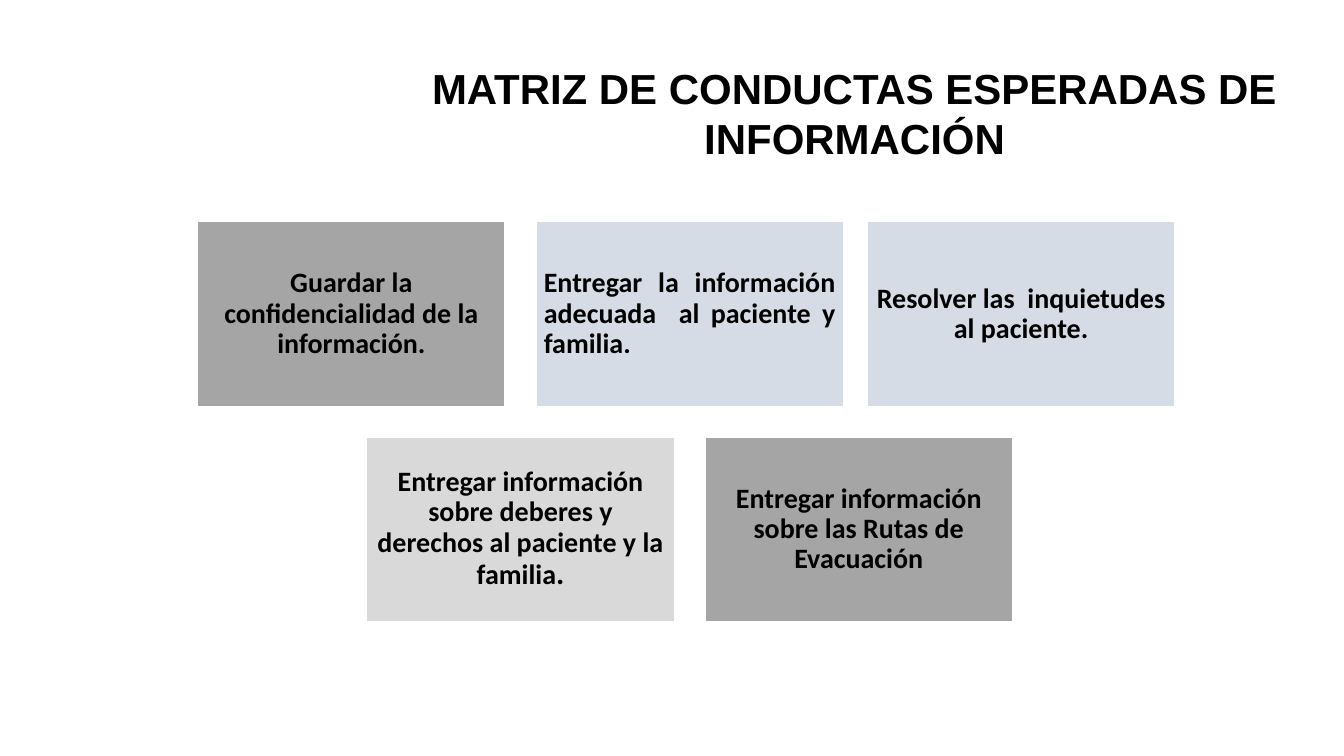
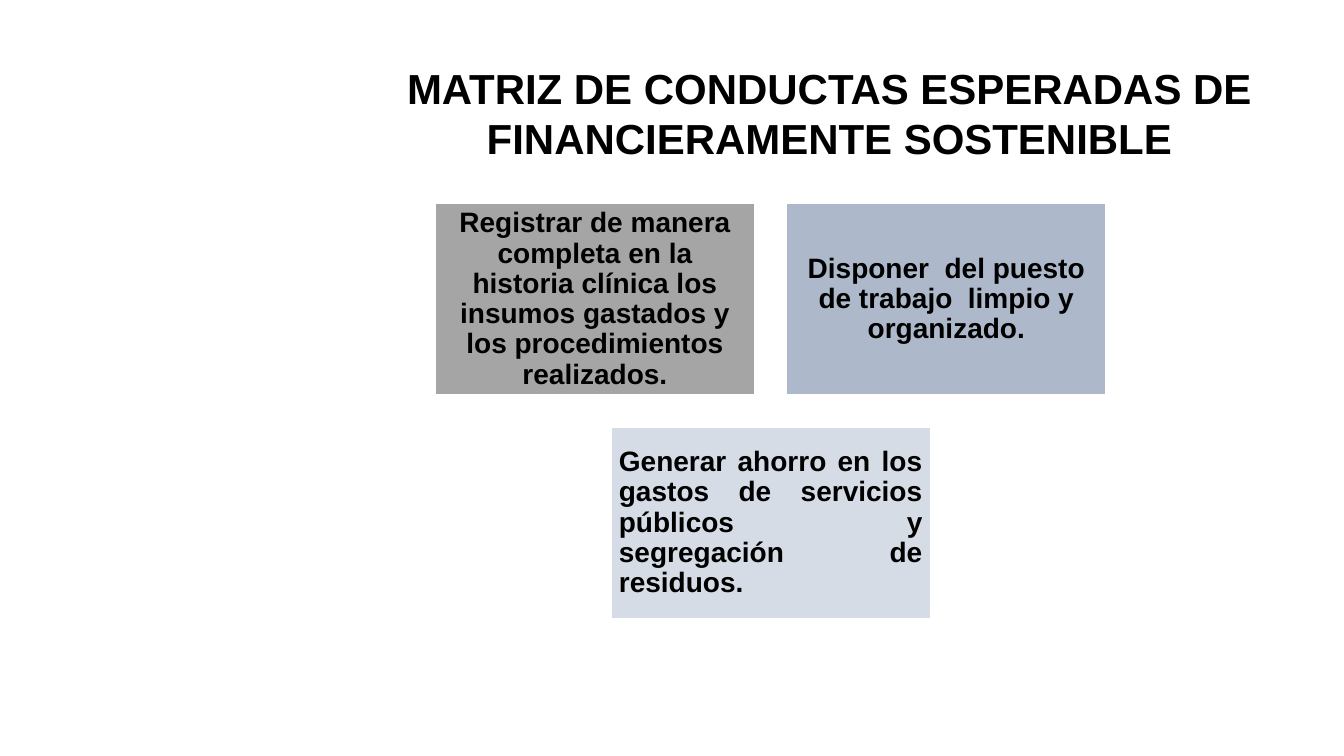
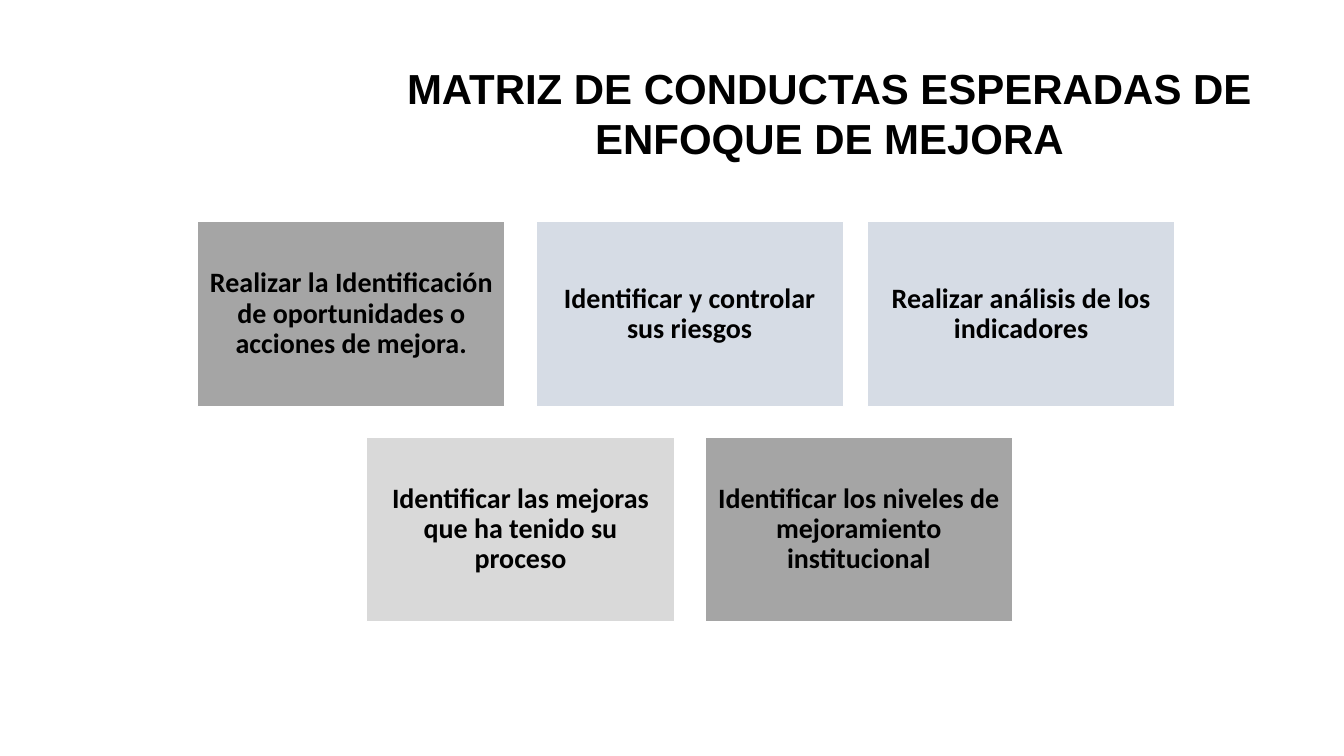
import pptx
import pptx.dml.color
import pptx.enum.shapes
import pptx.enum.text
import pptx.util

Cm = pptx.util.Cm
Pt = pptx.util.Pt
CENTER = pptx.enum.text.PP_ALIGN.CENTER
JUSTIFY = pptx.enum.text.PP_ALIGN.JUSTIFY

BLACK = "000000"
WHITE = "FFFFFF"
GRAY = "A5A5A5"
LIGHT_GRAY = "D9D9D9"
BLUE = "ADB9CA"
LIGHT_BLUE = "D6DCE5"

TITLE_START = "MATRIZ DE CONDUCTAS ESPERADAS DE "
TITLE_TOP, TITLE_WIDTH, TITLE_HEIGHT = 1.45, 22.66, 2.82
BOX_INSET = 0.2
GAP_RATIO = 0.1  # gap between boxes, as a share of the box width

# Each cell is (column, row, fill); half columns centre the lower row.
FIVE_BOXES = {
    "left": 4.98, "top": 5.59, "width": 7.75, "height": 4.65, "font": "Calibri",
    "cells": [(0, 0, GRAY), (1, 0, LIGHT_BLUE), (1.98, 0, LIGHT_BLUE),
              (0.5, 1, LIGHT_GRAY), (1.5, 1, GRAY)],
}
THREE_BOXES = {
    "left": 10.97, "top": 5.13, "width": 8.05, "height": 4.83, "font": "Arial",
    "cells": [(0, 0, GRAY), (1, 0, BLUE), (0.5, 1, LIGHT_BLUE)],
}

# Title ending, title left, layout, and (text, alignment, larger ending) per box
SLIDES = [
    ("INFORMACIÓN", 10.21, FIVE_BOXES, [
        ("Guardar la confidencialidad de la información.", CENTER, ""),
        ("Entregar la información adecuada  al paciente y familia.", JUSTIFY, ""),
        ("Resolver las  inquietudes al paciente.", CENTER, ""),
        ("Entregar información sobre deberes y derechos al paciente y la familia",
         CENTER, "."),
        ("Entregar información sobre las Rutas de Evacuación", CENTER, ""),
    ]),
    ("FINANCIERAMENTE SOSTENIBLE", 9.58, THREE_BOXES, [
        ("Registrar de manera completa en la historia clínica los insumos "
         "gastados y los procedimientos realizados.", CENTER, ""),
        ("Disponer  del puesto de trabajo  limpio y organizado.", CENTER, ""),
        ("Generar ahorro en los gastos de servicios públicos y segregación "
         "de residuos.", JUSTIFY, ""),
    ]),
    ("ENFOQUE DE MEJORA", 9.58, FIVE_BOXES, [
        ("Realizar la Identificación de oportunidades o acciones de mejora.",
         CENTER, ""),
        ("Identificar y controlar sus riesgos", CENTER, ""),
        ("Realizar análisis de los indicadores", CENTER, ""),
        ("Identificar las mejoras que ha tenido su proceso", CENTER, ""),
        ("Identificar los niveles de mejoramiento institucional", CENTER, ""),
    ]),
]


def color(hex_code):
    return pptx.dml.color.RGBColor.from_string(hex_code)


def write_bold(text_frame, text, font_name, size, alignment):
    """Fill the first paragraph with bold black text and return it."""
    text_frame.word_wrap = True
    paragraph = text_frame.paragraphs[0]
    paragraph.alignment = alignment
    paragraph.font.name = font_name
    paragraph.font.size = Pt(size)
    paragraph.font.bold = True
    paragraph.font.color.rgb = color(BLACK)
    paragraph.add_run().text = text
    return paragraph


presentation = pptx.Presentation()
presentation.slide_width = Cm(33.87)
presentation.slide_height = Cm(19.05)

for title_end, title_left, layout, boxes in SLIDES:
    slide = presentation.slides.add_slide(presentation.slide_layouts[6])
    title = slide.shapes.add_textbox(
        Cm(title_left), Cm(TITLE_TOP), Cm(TITLE_WIDTH), Cm(TITLE_HEIGHT))
    write_bold(title.text_frame, TITLE_START + title_end, "Arial", 30, CENTER)

    width, height = layout["width"], layout["height"]
    gap = width * GAP_RATIO
    for (column, row, fill), (text, alignment, ending) in zip(layout["cells"], boxes):
        shape = slide.shapes.add_shape(
            pptx.enum.shapes.MSO_SHAPE.RECTANGLE,
            Cm(layout["left"] + column * (width + gap)),
            Cm(layout["top"] + row * (height + gap)),
            Cm(width), Cm(height))
        shape.shadow.inherit = False
        shape.fill.solid()
        shape.fill.fore_color.rgb = color(fill)
        shape.line.color.rgb = color(WHITE)
        shape.line.width = Pt(1)

        text_frame = shape.text_frame
        text_frame.vertical_anchor = pptx.enum.text.MSO_ANCHOR.MIDDLE
        text_frame.margin_left = text_frame.margin_right = Cm(BOX_INSET)
        text_frame.margin_top = text_frame.margin_bottom = Cm(BOX_INSET)
        paragraph = write_bold(text_frame, text, layout["font"], 20, alignment)
        paragraph.line_spacing = 0.9
        if ending:
            run = paragraph.add_run()
            run.text = ending
            run.font.size = Pt(22)

presentation.save("out.pptx")
